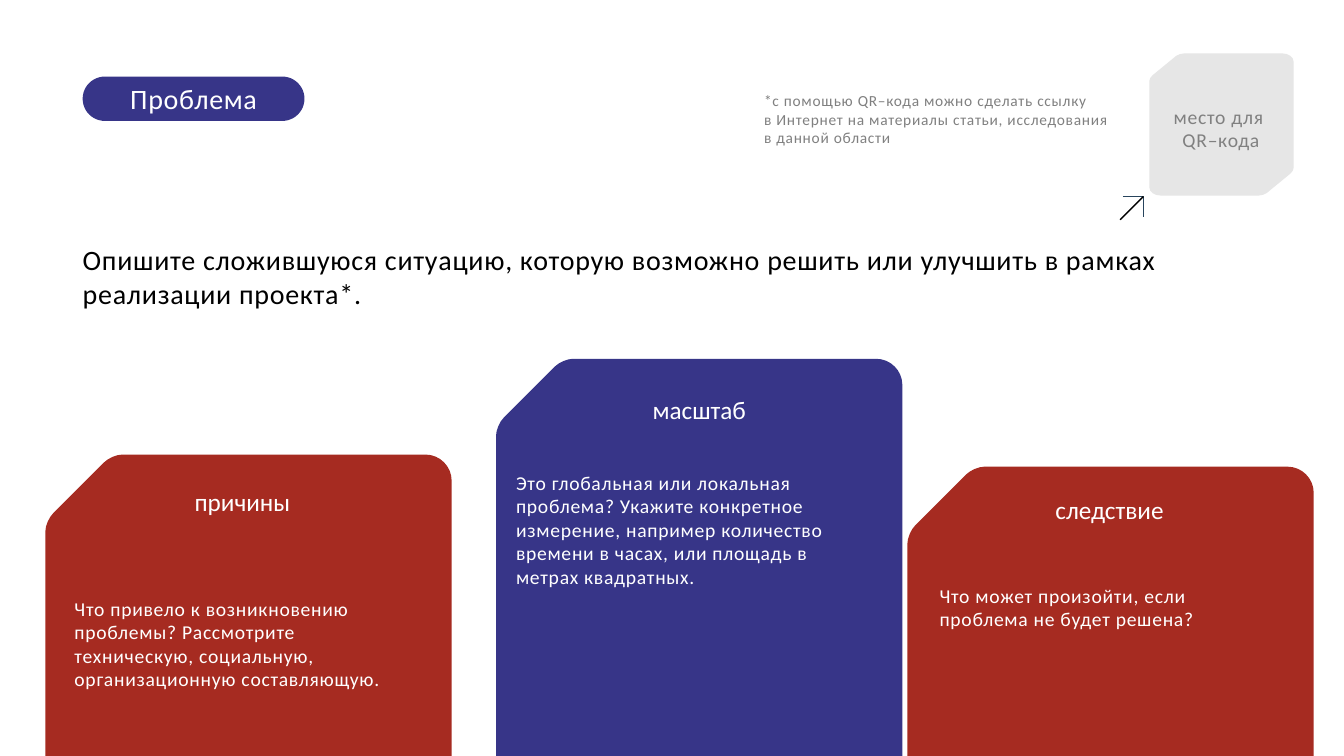
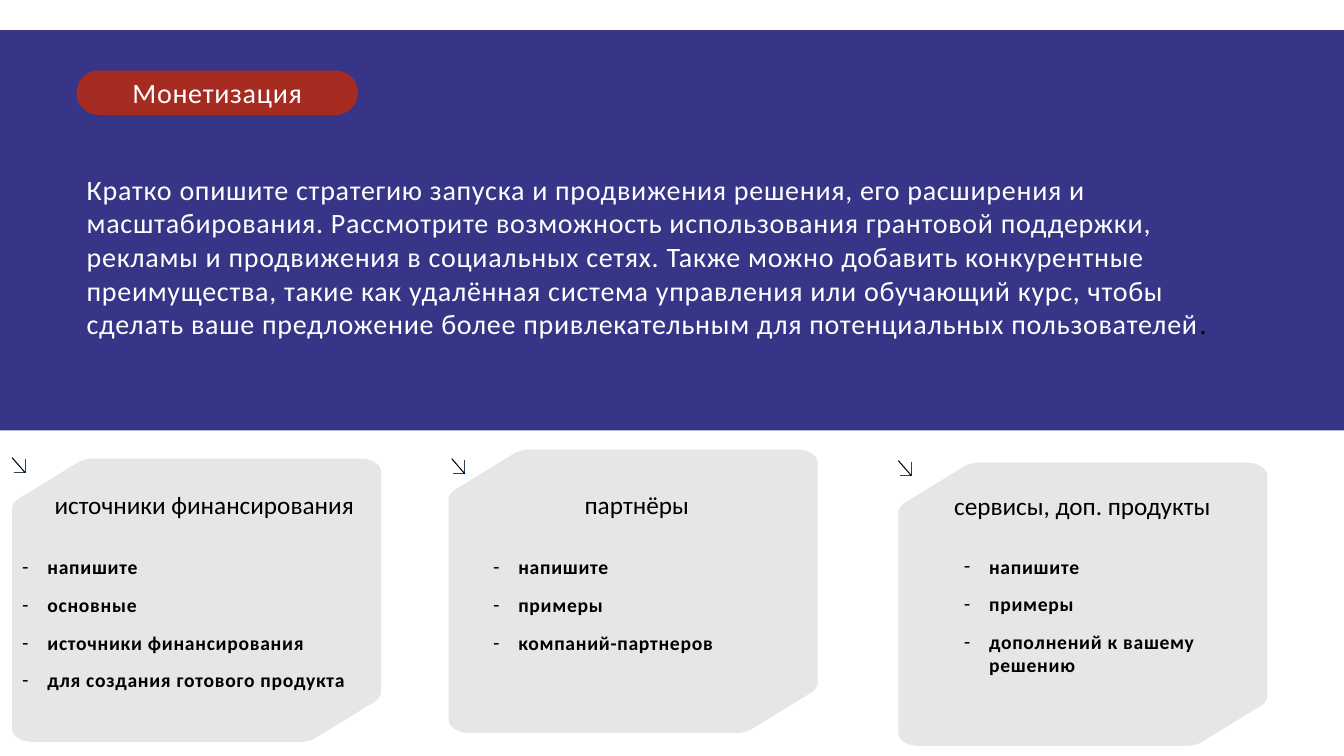
import lxml.etree
import pptx
import pptx.dml.color
import pptx.enum.shapes
import pptx.enum.text
import pptx.oxml.ns
import pptx.util

# Colours
BLUE = pptx.dml.color.RGBColor(0x37, 0x35, 0x88)
RED = pptx.dml.color.RGBColor(0xA6, 0x2B, 0x21)
LIGHT_GREY = pptx.dml.color.RGBColor(0xE6, 0xE6, 0xE6)
MID_GREY = pptx.dml.color.RGBColor(0x80, 0x80, 0x80)
STEEL = pptx.dml.color.RGBColor(0x28, 0x44, 0x5D)
BLACK = pptx.dml.color.RGBColor(0, 0, 0)
WHITE = pptx.dml.color.RGBColor(255, 255, 255)

LEFT = pptx.enum.text.PP_ALIGN.LEFT
CENTER = pptx.enum.text.PP_ALIGN.CENTER
TOP = pptx.enum.text.MSO_ANCHOR.TOP
MIDDLE = pptx.enum.text.MSO_ANCHOR.MIDDLE


# Text styles
def make_style(size, color, tracking=50, bold=False, alignment=LEFT,
               space_before=0, bullet=None):
    return {
        "font": {"name": "Calibri", "size": pptx.util.Pt(size), "bold": bold},
        "paragraph": {"alignment": alignment,
                      "space_before": pptx.util.Pt(space_before)},
        "color": color, "tracking": tracking, "bullet": bullet,
    }


TITLE = make_style(20, WHITE, alignment=CENTER)
LEAD_DARK = make_style(20, BLACK)
LEAD_LIGHT = make_style(20, WHITE)
NOTE = make_style(11, MID_GREY)
CODE_LABEL = make_style(14, MID_GREY, alignment=CENTER)
HEADING_LIGHT = make_style(18, WHITE, tracking=0, alignment=CENTER)
HEADING_DARK = make_style(18, BLACK, tracking=0, alignment=CENTER)
CARD_TEXT = make_style(14, WHITE)
LIST = make_style(14, BLACK, bold=True, space_before=10, bullet="-")

# Card geometry: size, cut corner and corner radius, each as (x, y)
TALL_CARD = {"size": (4.03, 5.37), "cut": (0.66, 0.66), "radius": (0.26, 0.26)}
WIDE_CARD = {"size": (3.66, 2.81), "cut": (0.71, 0.44), "radius": (0.2, 0.13)}
CODE_CARD = {"size": (1.43, 1.41), "cut": (0.3, 0.24), "radius": (0.11, 0.08)}


def inches(values):
    return [pptx.util.Inches(value) for value in values]


def set_attributes(target, values):
    for name, value in values.items():
        setattr(target, name, value)


# Text
def add_run(paragraph, text, style, color=None):
    run = paragraph.add_run()
    run.text = text
    set_attributes(run.font, style["font"])
    run.font.color.rgb = color or style["color"]
    run.font._element.set("spc", str(style["tracking"]))


def set_bullet(paragraph, character):
    properties = paragraph._p.get_or_add_pPr()
    indent = pptx.util.Inches(0.25) if character else 0
    properties.set("marL", str(indent))
    properties.set("indent", str(-indent))
    if character:
        lxml.etree.SubElement(
            properties, pptx.oxml.ns.qn("a:buChar"), char=character)
    else:
        lxml.etree.SubElement(properties, pptx.oxml.ns.qn("a:buNone"))


def write_text(shape, lines, style, anchor=TOP):
    frame = shape.text_frame
    set_attributes(frame, {
        "word_wrap": True, "vertical_anchor": anchor,
        "auto_size": pptx.enum.text.MSO_AUTO_SIZE.NONE})
    for number, line in enumerate(lines):
        paragraph = frame.add_paragraph() if number else frame.paragraphs[0]
        set_attributes(paragraph, style["paragraph"])
        set_bullet(paragraph, style["bullet"])
        add_run(paragraph, line, style)
    return shape


def add_text(slide, box, lines, style):
    return write_text(slide.shapes.add_textbox(*inches(box)), lines, style)


def fill_placeholder(slide, index, box, lines, style, anchor=TOP):
    """Move a placeholder to its box, in front of what is drawn so far."""
    shape = slide.placeholders[index]
    set_attributes(shape, dict(zip(("left", "top", "width", "height"),
                                   inches(box))))
    shape.element.getparent().append(shape.element)
    return write_text(shape, lines, style, anchor)


# Shapes
def paint(shape, color):
    shape.shadow.inherit = False
    shape.fill.solid()
    shape.fill.fore_color.rgb = color
    shape.line.fill.background()


def add_round_box(slide, box, rounding, color):
    shape = slide.shapes.add_shape(
        pptx.enum.shapes.MSO_SHAPE.ROUNDED_RECTANGLE, *inches(box))
    shape.adjustments[0] = rounding
    paint(shape, color)


def add_pill_title(slide, box, text, color):
    add_round_box(slide, box, 0.5, color)
    fill_placeholder(slide, 0, box, [text], TITLE, MIDDLE)


def bend_segment(segment, start, corner, end):
    """Turn a straight outline segment into a curve around its corner."""
    segment.tag = pptx.oxml.ns.qn("a:cubicBezTo")
    for point in list(segment):
        segment.remove(point)
    controls = [[a + 0.55 * (c - a) for a, c in zip(anchor, corner)]
                for anchor in (start, end)]
    for x, y in controls + [end]:
        lxml.etree.SubElement(
            segment, pptx.oxml.ns.qn("a:pt"),
            x=str(pptx.util.Inches(x)), y=str(pptx.util.Inches(y)))


def add_card(slide, left, top, card, color):
    """Rounded card with its top left and bottom right corners cut."""
    (width, height), (cut_x, cut_y) = card["size"], card["cut"]
    radius_x, radius_y = card["radius"]
    # Each corner: where its curve starts, its tip, where the curve ends
    half = [
        ((0, cut_y + 0.4 * radius_y), (0, cut_y),
         (0.3 * radius_x, cut_y - 0.3 * radius_y)),
        ((cut_x - 0.3 * radius_x, 0.3 * radius_y), (cut_x, 0),
         (cut_x + 0.4 * radius_x, 0)),
        ((width - radius_x, 0), (width, 0), (width, radius_y)),
    ]
    corners = half + [tuple((width - x, height - y) for x, y in corner)
                      for corner in half]
    points = [inches((left + x, top + y))
              for start, _, end in corners for x, y in (start, end)]
    builder = slide.shapes.build_freeform(*points[0])
    builder.add_line_segments(points[1:], close=True)
    shape = builder.convert_to_shape()
    segments = list(shape.element.iter(pptx.oxml.ns.qn("a:lnTo")))
    for segment, corner in zip(segments[::2], corners):
        bend_segment(segment, *corner)
    paint(shape, color)


def add_arrow(slide, tail, tip, weight):
    """Thin diagonal with an open right-angled head, as one group."""
    group = slide.shapes.add_group_shape()
    reach_x, reach_y = (0.88 * (a - b) for a, b in zip(tail, tip))
    head_points = [inches(point) for point in (
        (tip[0] + reach_x, tip[1]), tip, (tip[0], tip[1] + reach_y))]
    builder = group.shapes.build_freeform(*head_points[0])
    builder.add_line_segments(head_points[1:], close=False)
    head = builder.convert_to_shape()
    head.shadow.inherit = False
    head.fill.background()
    shaft = group.shapes.add_connector(
        pptx.enum.shapes.MSO_CONNECTOR.STRAIGHT, *inches(tail + tip))
    for shape, color in ((head, STEEL), (shaft, BLACK)):
        shape.line.color.rgb = color
        shape.line.width = pptx.util.Pt(weight)
    lxml.etree.SubElement(
        shaft._element.spPr, pptx.oxml.ns.qn("a:effectLst"))


# Slides
def build_problem(presentation):
    slide = presentation.slides.add_slide(presentation.slide_layouts[1])
    fill_placeholder(slide, 1, (0.72, 2.36, 11.81, 0.77), [
        "Опишите сложившуюся ситуацию, которую возможно решить или улучшить "
        "в рамках реализации проекта*."], LEAD_DARK)

    # Note and place for the code
    add_text(slide, (7.48, 0.86, 3.9, 0.66), [
        "*с помощью QR–кода можно сделать ссылку",
        "в Интернет на материалы статьи, исследования",
        "в данной области"], NOTE)
    add_card(slide, 11.4, 0.53, CODE_CARD, LIGHT_GREY)
    add_text(slide, (11.29, 0.99, 1.64, 0.57),
             ["место для ", "QR–кода"], CODE_LABEL)
    add_pill_title(slide, (0.82, 0.76, 2.2, 0.44), "Проблема", BLUE)
    add_arrow(slide, (11.11, 2.18), (11.34, 1.95), 1)

    # Cards: left, top, colour, heading and its box, text and its box
    cards = [
        (4.92, 3.56, BLUE, "масштаб", (5.93, 3.86, 2.01, 0.4),
         "Это глобальная или локальная проблема? Укажите конкретное "
         "измерение, например количество времени в часах, или площадь "
         "в метрах квадратных.", (5.02, 4.62, 3.43, 1.28)),
        (0.45, 4.51, RED, "причины", (1.45, 4.78, 1.91, 0.4),
         "Что привело к возникновению проблемы? Рассмотрите техническую, "
         "социальную, организационную составляющую.",
         (0.64, 5.87, 3.43, 1.04)),
        (9, 4.63, RED, "следствие", (9.85, 4.86, 2.31, 0.4),
         "Что может произойти, если проблема не будет решена?",
         (9.22, 5.74, 3.43, 0.57)),
    ]
    for left, top, color, heading, heading_box, text, text_box in cards:
        add_card(slide, left, top, TALL_CARD, color)
        add_text(slide, heading_box, [heading], HEADING_LIGHT)
        add_text(slide, text_box, [text], CARD_TEXT)


def build_monetization(presentation):
    slide = presentation.slides.add_slide(presentation.slide_layouts[4])
    add_round_box(slide, (-1.1, 0.3, 15.52, 3.97), 0.09, BLUE)
    lead = fill_placeholder(slide, 1, (0.76, 1.66, 11.81, 2), [
        "Кратко опишите стратегию запуска и продвижения решения, его "
        "расширения и масштабирования. Рассмотрите возможность использования "
        "грантовой поддержки, рекламы и продвижения в социальных сетях. Также "
        "можно добавить конкурентные преимущества, такие как удалённая "
        "система управления или обучающий курс, чтобы сделать ваше "
        "предложение более привлекательным для потенциальных пользователей"],
        LEAD_LIGHT)
    add_run(lead.text_frame.paragraphs[0], ".", LEAD_LIGHT, BLACK)
    add_pill_title(slide, (0.76, 0.7, 2.79, 0.44), "Монетизация", RED)

    # Cards: left, top, arrow tail, heading and its box, list and its box
    cards = [
        (0.12, 4.55, (0.12, 4.54),
         "источники финансирования", (0.42, 4.81, 3.21, 0.4),
         ["напишите", "основные", "источники финансирования",
          "для создания готового продукта"], (0.12, 5.46, 3.43, 1.8)),
        (4.45, 4.46, (4.48, 4.55), "партнёры", (5.69, 4.81, 1.25, 0.4),
         ["напишите", "примеры", "компаний-партнеров"],
         (4.79, 5.46, 3.32, 1.58)),
        (8.91, 4.59, (8.91, 4.57),
         "сервисы, доп. продукты", (9.35, 4.82, 2.77, 0.4),
         ["напишите", "примеры", "дополнений к вашему решению"],
         (9.46, 5.45, 2.57, 1.58)),
    ]
    for index, card in enumerate(cards, start=2):
        left, top, tail, heading, heading_box, items, list_box = card
        add_arrow(slide, tail, (tail[0] + 0.13, tail[1] + 0.15), 0.75)
        add_card(slide, left, top, WIDE_CARD, LIGHT_GREY)
        add_text(slide, heading_box, [heading], HEADING_DARK)
        fill_placeholder(slide, index, list_box, items, LIST)


def main():
    presentation = pptx.Presentation()
    presentation.slide_width = pptx.util.Inches(13.33)
    presentation.slide_height = pptx.util.Inches(7.5)
    build_problem(presentation)
    build_monetization(presentation)
    presentation.save("out.pptx")


if __name__ == "__main__":
    main()
